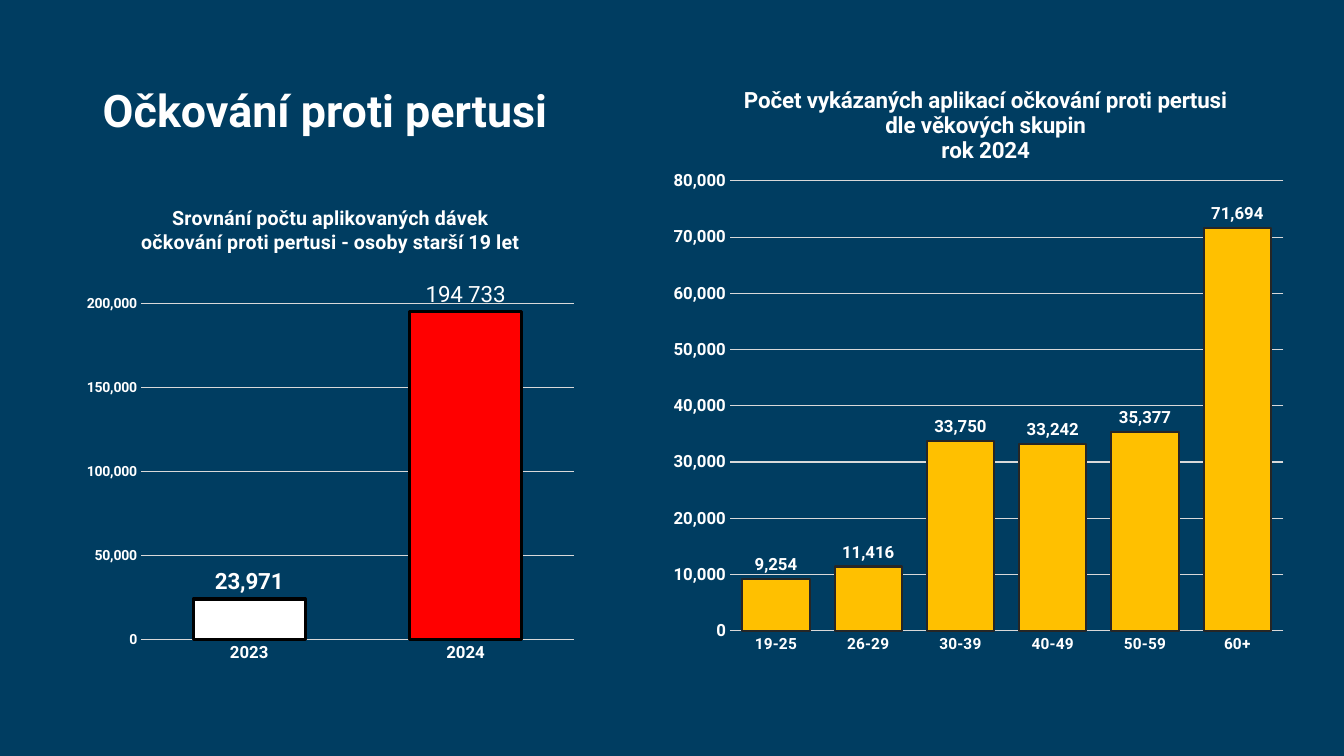
from lxml import etree
from pptx import Presentation
from pptx.chart.data import CategoryChartData
from pptx.dml.color import RGBColor
from pptx.enum.chart import XL_CHART_TYPE as ChartType
from pptx.enum.chart import XL_LABEL_POSITION as LabelPosition
from pptx.enum.chart import XL_TICK_MARK as TickMark
from pptx.enum.text import MSO_ANCHOR as Anchor
from pptx.oxml.ns import qn
from pptx.util import Cm, Pt

NAVY = RGBColor(0x00, 0x3D, 0x61)
WHITE = RGBColor(0xFF, 0xFF, 0xFF)
RED = RGBColor(0xFF, 0x00, 0x00)
AMBER = RGBColor(0xFF, 0xC0, 0x00)
BLACK = RGBColor(0x00, 0x00, 0x00)
CHARCOAL = RGBColor(0x26, 0x26, 0x26)
GRID_GREY = RGBColor(0xD9, 0xD9, 0xD9)
FONT = "Roboto"
THOUSANDS = "#,##0"


def style_font(font, size, bold=True):
    font.name = FONT
    font.size = Pt(size)
    font.bold = bold
    font.color.rgb = WHITE


def style_line(line, color, width):
    line.color.rgb = color
    line.width = Pt(width)


def add_heading(slide, text):
    box = slide.shapes.add_textbox(Cm(2.34), Cm(1.02), Cm(29.21), Cm(3.68))
    frame = box.text_frame
    frame.word_wrap = True
    frame.vertical_anchor = Anchor.MIDDLE
    heading = frame.paragraphs[0]
    heading.text = text
    heading.line_spacing = 0.9
    style_font(heading.font, 32)


def set_chart_title(chart, lines, size):
    chart.has_title = True
    chart.chart_title.include_in_layout = False
    frame = chart.chart_title.text_frame
    frame.text = "\n".join(lines)
    for paragraph in frame.paragraphs:
        style_font(paragraph.font, size)


def set_plot_area(chart, x, y, w, h):
    plot_area = chart.plots[0]._element.getparent()
    for old_layout in plot_area.findall(qn("c:layout")):
        plot_area.remove(old_layout)
    layout = etree.Element(qn("c:layout"))
    manual = etree.SubElement(layout, qn("c:manualLayout"))
    settings = {"layoutTarget": "inner", "xMode": "edge", "yMode": "edge",
                "x": x, "y": y, "w": w, "h": h}
    for tag, value in settings.items():
        etree.SubElement(manual, qn(f"c:{tag}")).set("val", str(value))
    plot_area.insert(0, layout)


def style_axes(chart, category_size, value_size, maximum, step):
    ages = chart.category_axis
    style_font(ages.tick_labels.font, category_size)
    style_line(ages.format.line, GRID_GREY, 0.75)
    doses = chart.value_axis
    style_font(doses.tick_labels.font, value_size)
    doses.tick_labels.number_format = THOUSANDS
    doses.tick_labels.number_format_is_linked = False
    doses.minimum_scale = 0
    doses.maximum_scale = maximum
    doses.major_unit = step
    doses.format.line.fill.background()
    style_line(doses.major_gridlines.format.line, GRID_GREY, 0.75)
    for axis in (ages, doses):
        axis.major_tick_mark = axis.minor_tick_mark = TickMark.NONE


def add_column_chart(slide, box, doses_by_category, gap, fill, outline, label_size):
    data = CategoryChartData(number_format=THOUSANDS)
    data.categories = list(doses_by_category)
    data.add_series("Series 1", list(doses_by_category.values()))
    chart = slide.shapes.add_chart(
        ChartType.COLUMN_CLUSTERED, *map(Cm, box), data).chart
    chart.has_legend = False
    style_font(chart.font, 10, bold=False)
    plot = chart.plots[0]
    plot.vary_by_categories = False
    plot.gap_width = gap
    plot.overlap = -27
    columns = plot.series[0]
    columns.format.fill.solid()
    columns.format.fill.fore_color.rgb = fill
    style_line(columns.format.line, *outline)
    labels = columns.data_labels
    labels.show_value = True
    labels.position = LabelPosition.OUTSIDE_END
    labels.number_format = THOUSANDS
    labels.number_format_is_linked = False
    style_font(labels.font, label_size)
    return chart


def highlight_column(chart, index, color, outline, text, size):
    column = chart.plots[0].series[0].points[index]
    column.format.fill.solid()
    column.format.fill.fore_color.rgb = color
    style_line(column.format.line, *outline)
    caption = column.data_label.text_frame.paragraphs[0].add_run()
    caption.text = text
    style_font(caption.font, size, bold=False)
    column.data_label.position = LabelPosition.OUTSIDE_END


def main():
    deck = Presentation()
    deck.slide_width, deck.slide_height = Cm(33.87), Cm(19.05)
    slide = deck.slides.add_slide(deck.slide_layouts[6])
    slide.background.fill.solid()
    slide.background.fill.fore_color.rgb = NAVY
    add_heading(slide, "Očkování proti pertusi")

    year_outline = (BLACK, 2.25)
    years = add_column_chart(
        slide, (1.93, 4.7, 12.8, 12.27), {"2023": 23971, "2024": 194892},
        93, WHITE, year_outline, 16)
    set_chart_title(years, ["Srovnání počtu aplikovaných dávek",
                            "očkování proti pertusi - osoby starší 19 let"], 14)
    set_plot_area(years, 0.127, 0.171, 0.852, 0.759)
    style_axes(years, 12, 10, 220000, 50000)
    highlight_column(years, 1, RED, year_outline, "194 733", 16)

    age_groups = add_column_chart(
        slide, (16.94, 1.65, 15.8, 15.57),
        {"19-25": 9254, "26-29": 11416, "30-39": 33750,
         "40-49": 33242, "50-59": 35377, "60+": 71694},
        37, AMBER, (CHARCOAL, 1.5), 12)
    set_chart_title(age_groups, ["Počet vykázaných aplikací očkování proti pertusi",
                                 "dle věkových skupin", "rok 2024"], 16)
    set_plot_area(age_groups, 0.092, 0.187, 0.883, 0.728)
    style_axes(age_groups, 11, 12, 80000, 10000)

    deck.save("out.pptx")


if __name__ == "__main__":
    main()
